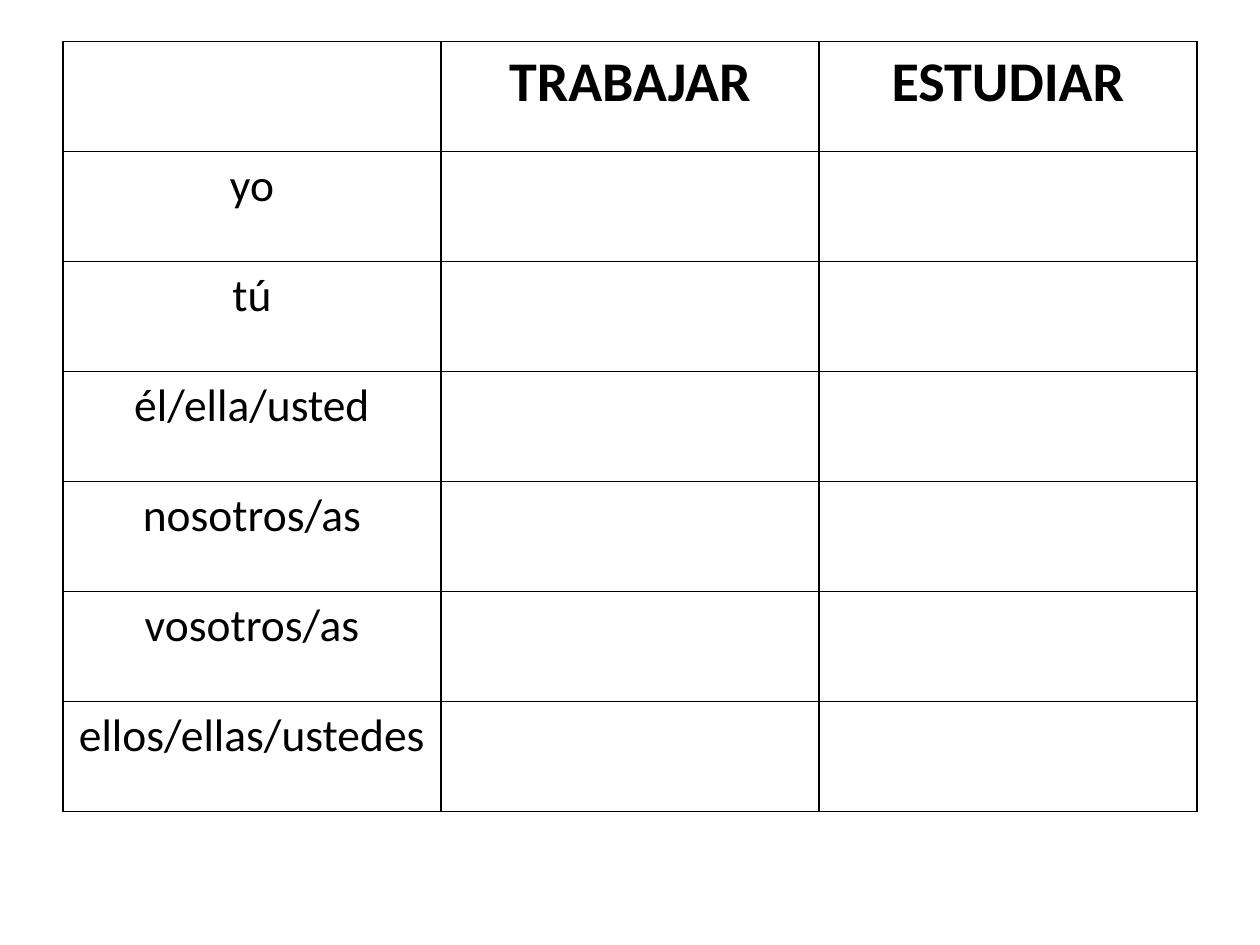
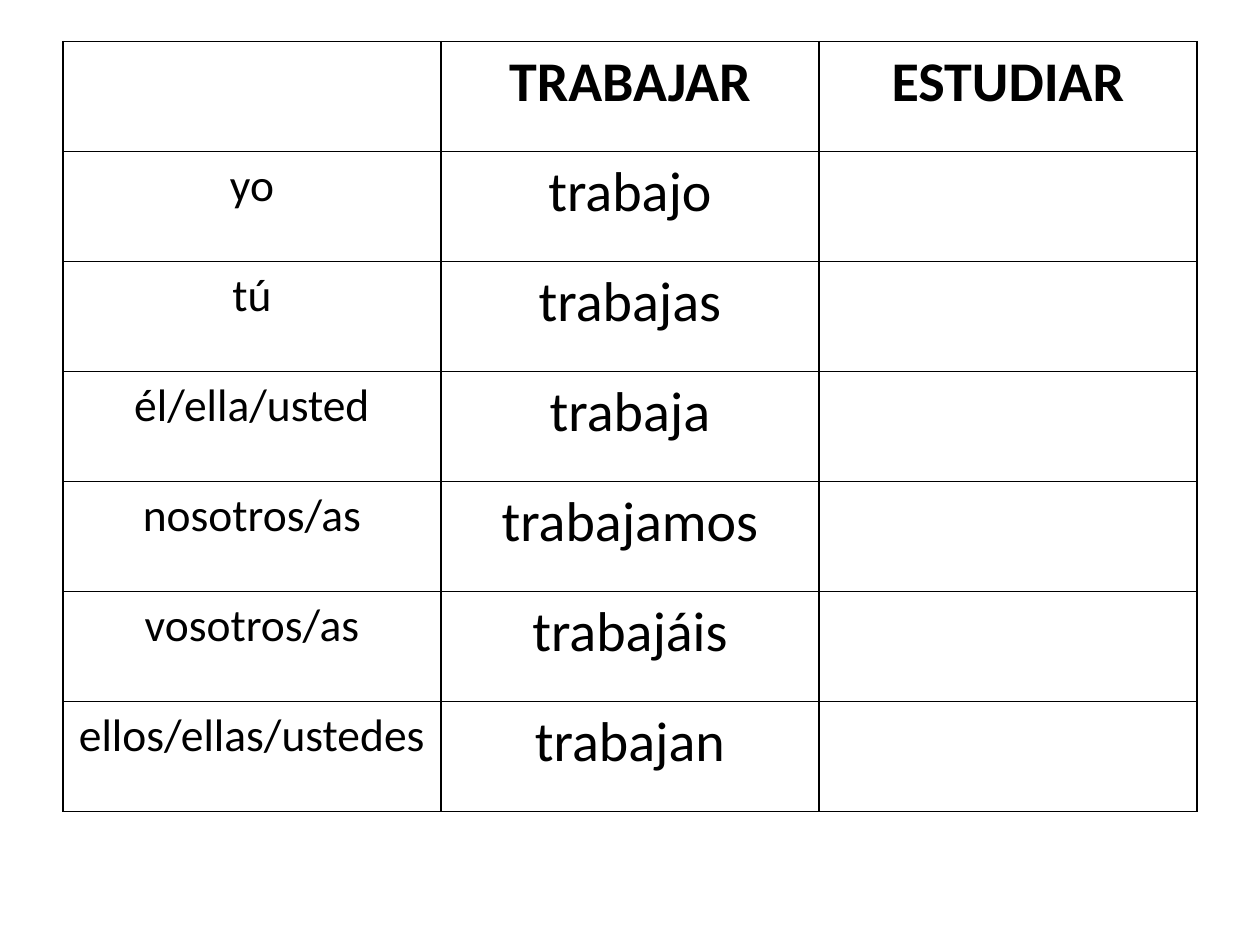
from dataclasses import dataclass

import lxml.etree
import pptx
import pptx.dml.color
import pptx.enum.text
import pptx.oxml.ns
import pptx.util

# Shared look
HUES = {"ink": "000000", "page": "FFFFFF"}
FONT = "Calibri"
WIDE, HIGH = 10, 7.5
LEFT, TOP = 0.5, 0.33
GRID_WIDE, GRID_HIGH = WIDE - 2 * LEFT, 6.11
RULE = 1

# Words of the verb grid
VERBS = ["TRABAJAR", "ESTUDIAR"]
PERSONS = ["yo", "tú", "él/ella/usted", "nosotros/as", "vosotros/as", "ellos/ellas/ustedes"]
ENDINGS = ["o", "as", "a", "amos", "áis", "an"]


@dataclass(frozen=True)
class Style:
    size: int
    bold: bool = False


HEAD, PERSON, FORM = Style(32, True), Style(26), Style(32)


@dataclass(frozen=True)
class Entry:
    row: int
    col: int
    text: str
    style: Style


def hue(name: str) -> pptx.dml.color.RGBColor:
    return pptx.dml.color.RGBColor.from_string(HUES[name])


def frame(cell) -> None:
    """Rule all four sides of a cell, then fill it."""
    props = cell._tc.get_or_add_tcPr()
    qn = pptx.oxml.ns.qn
    for side in "LRTB":
        line = lxml.etree.SubElement(props, qn(f"a:ln{side}"), w=str(pptx.util.Pt(RULE)))
        fill = lxml.etree.SubElement(line, qn("a:solidFill"))
        lxml.etree.SubElement(fill, qn("a:srgbClr"), val=HUES["ink"])
    cell.fill.solid()
    cell.fill.fore_color.rgb = hue("page")


def write(table, entry: Entry) -> None:
    para = table.cell(entry.row, entry.col).text_frame.paragraphs[0]
    para.alignment = pptx.enum.text.PP_ALIGN.CENTER
    run = para.add_run()
    run.text = entry.text
    run.font.name = FONT
    run.font.size = pptx.util.Pt(entry.style.size)
    run.font.bold = entry.style.bold
    run.font.color.rgb = hue("ink")


def draw_grid(slide, entries: list[Entry]) -> None:
    rows, cols = len(PERSONS) + 1, len(VERBS) + 1
    box = [pptx.util.Inches(n) for n in (LEFT, TOP, GRID_WIDE, GRID_HIGH)]
    table = slide.shapes.add_table(rows, cols, *box).table
    table.first_row = table.horz_banding = False
    for cell in table.iter_cells():
        frame(cell)
    for entry in entries:
        write(table, entry)


def main() -> None:
    deck = pptx.Presentation()
    deck.slide_width = pptx.util.Inches(WIDE)
    deck.slide_height = pptx.util.Inches(HIGH)

    # Headings and persons stand on both slides
    base = [Entry(0, col, verb, HEAD) for col, verb in enumerate(VERBS, 1)]
    base += [Entry(row, 0, who, PERSON) for row, who in enumerate(PERSONS, 1)]
    # The second slide adds the forms of the first verb
    forms = [Entry(row, 1, "trabaj" + end, FORM) for row, end in enumerate(ENDINGS, 1)]

    for extra in ([], forms):
        draw_grid(deck.slides.add_slide(deck.slide_layouts[6]), base + extra)
    deck.save("out.pptx")


if __name__ == "__main__":
    main()
